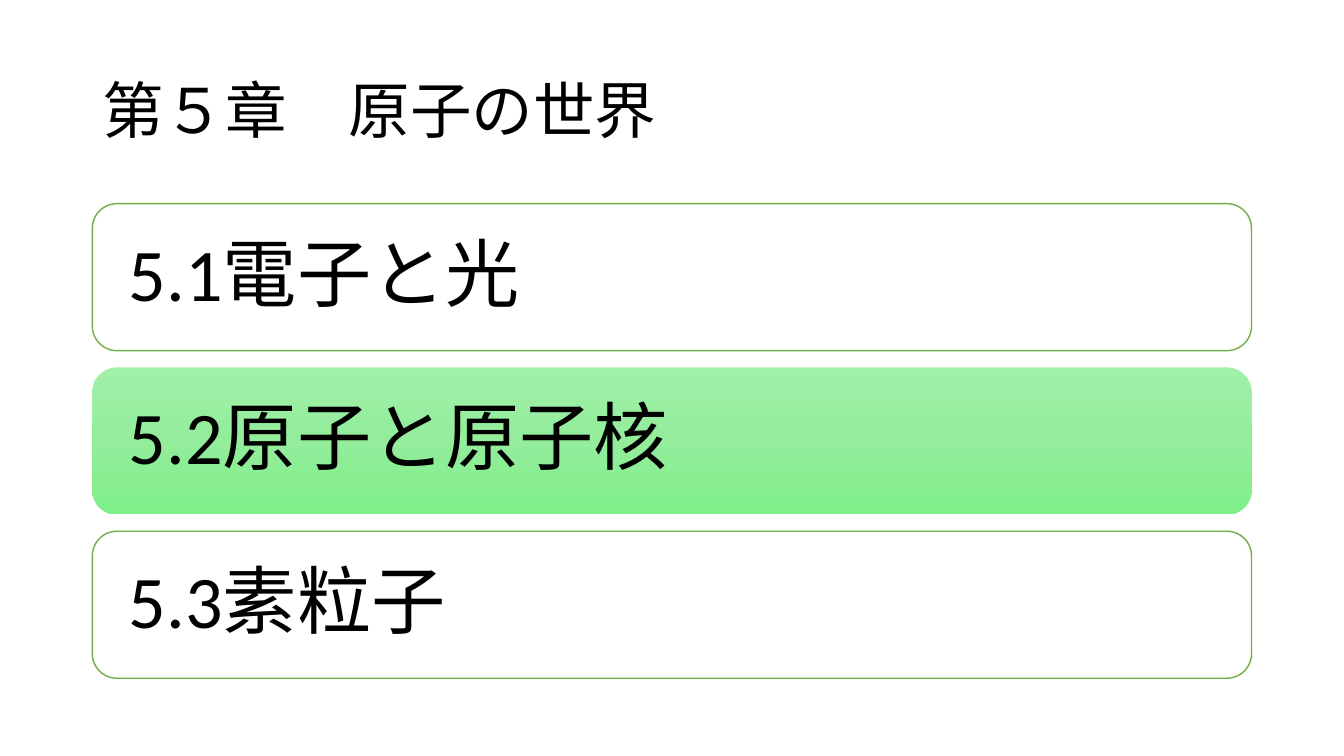
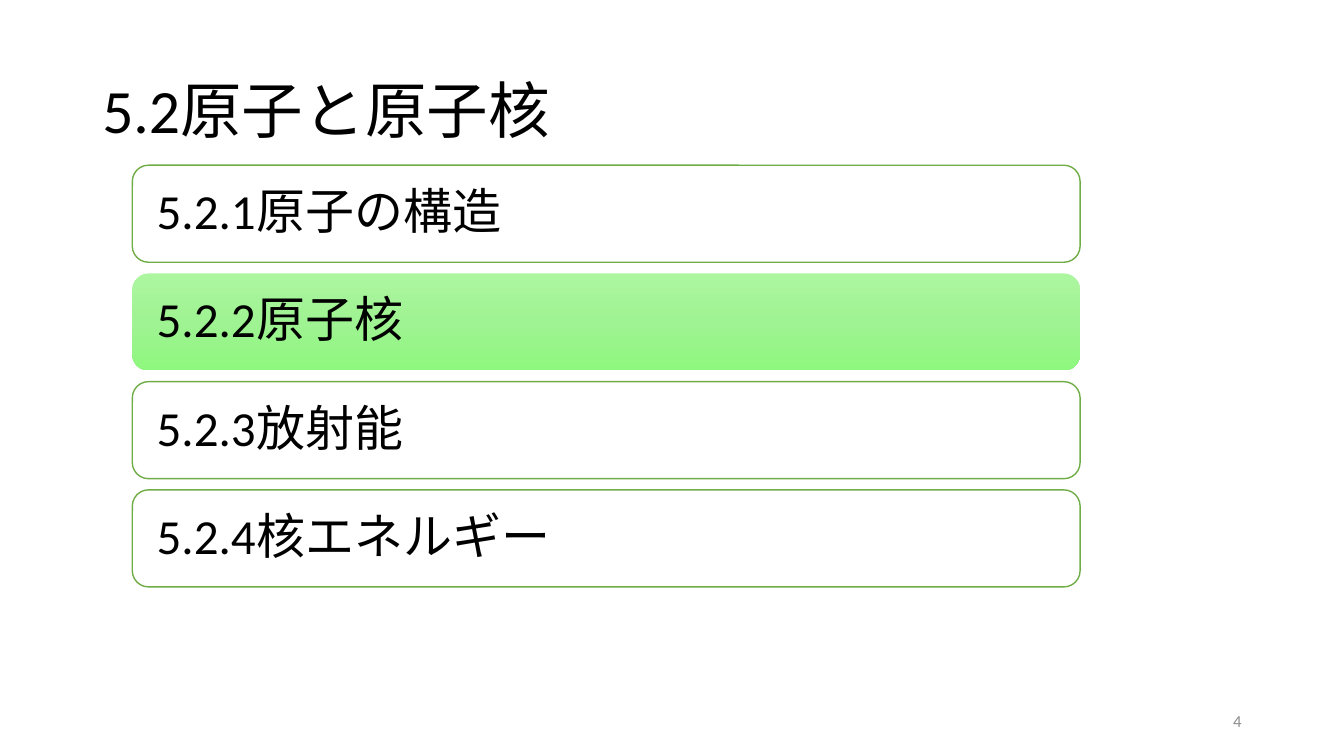
from copy import deepcopy
from dataclasses import dataclass

from pptx import Presentation
from pptx.dml.color import RGBColor
from pptx.enum.shapes import MSO_SHAPE
from pptx.enum.text import MSO_ANCHOR, PP_ALIGN
from pptx.oxml.ns import qn
from pptx.shapes.autoshape import Shape
from pptx.slide import Slide
from pptx.text.text import TextFrame
from pptx.util import Pt

FONT = "Calibri"
BLACK = RGBColor(0x00, 0x00, 0x00)
WHITE = RGBColor(0xFF, 0xFF, 0xFF)
GREEN = RGBColor(0x70, 0xAD, 0x47)
GRAY = RGBColor(0x8C, 0x8C, 0x8C)
CHAPTER_GREENS = (RGBColor(0xA1, 0xF0, 0xA9), RGBColor(0x93, 0xED, 0x9B),
                  RGBColor(0x7F, 0xEF, 0x89))
SECTION_GREENS = (RGBColor(0xAC, 0xF6, 0xA0), RGBColor(0x9F, 0xF3, 0x92),
                  RGBColor(0x8E, 0xF7, 0x7D))


@dataclass(frozen=True)
class Agenda:
    """A column of rounded cards, one of them highlighted."""
    items: tuple[str, ...]
    current: int
    greens: tuple[RGBColor, ...]
    left: float
    top: float
    width: float
    height: float
    pitch: float
    inset: float
    size: float


@dataclass(frozen=True)
class Page:
    title: str
    agenda: Agenda
    number: str = ""


PAGES = (
    Page("第５章　原子の世界",
         Agenda(("5.1電子と光", "5.2原子と原子核", "5.3素粒子"), 1, CHAPTER_GREENS,
                left=66, top=145.5, width=828, height=105, pitch=117,
                inset=21, size=53)),
    Page("5.2原子と原子核",
         Agenda(("5.2.1原子の構造", "5.2.2原子核", "5.2.3放射能", "5.2.4核エネルギー"),
                1, SECTION_GREENS,
                left=94.5, top=118, width=677, height=69.3, pitch=77.3,
                inset=14, size=35),
         number="4"),
)


def write(tf: TextFrame, text: str, size: float, color: RGBColor = BLACK,
          align: PP_ALIGN = PP_ALIGN.LEFT, spacing: float = 0.9) -> None:
    tf.word_wrap = True
    tf.vertical_anchor = MSO_ANCHOR.MIDDLE
    p = tf.paragraphs[0]
    p.text = text
    p.alignment = align
    p.line_spacing = spacing
    p.font.name = FONT
    p.font.size = Pt(size)
    p.font.color.rgb = color


def add_label(s: Slide, left: float, top: float, width: float,
              height: float) -> TextFrame:
    return s.shapes.add_textbox(Pt(left), Pt(top), Pt(width), Pt(height)).text_frame


def fill_gradient(sp: Shape, colors: tuple[RGBColor, ...]) -> None:
    """Fill from top to bottom with three evenly spaced stops."""
    sp.fill.gradient()
    sp.fill.gradient_angle = 270
    first = sp._element.spPr.find(".//" + qn("a:gs"))
    first.addnext(deepcopy(first))
    for stop, position, color in zip(sp.fill.gradient_stops, (0, 0.5, 1), colors):
        stop.position = position
        stop.color.rgb = color


def add_agenda(s: Slide, agenda: Agenda) -> None:
    for i, item in enumerate(agenda.items):
        sp = s.shapes.add_shape(
            MSO_SHAPE.ROUNDED_RECTANGLE, Pt(agenda.left),
            Pt(agenda.top + i * agenda.pitch), Pt(agenda.width), Pt(agenda.height))
        sp.shadow.inherit = False
        if i == agenda.current:
            fill_gradient(sp, agenda.greens)
            sp.line.fill.background()
        else:
            sp.fill.solid()
            sp.fill.fore_color.rgb = WHITE
            sp.line.color.rgb = GREEN
            sp.line.width = Pt(1)
        tf = sp.text_frame
        tf.margin_left = tf.margin_right = Pt(agenda.inset)
        tf.margin_top = tf.margin_bottom = Pt(0)
        write(tf, item, agenda.size)


def add_page(prs: Presentation, page: Page) -> None:
    s = prs.slides.add_slide(prs.slide_layouts[6])
    # Title
    write(add_label(s, 66, 28.8, 828, 104.4), page.title, 44)
    # Cards
    add_agenda(s, page.agenda)
    # Page number
    if page.number:
        write(add_label(s, 678, 500.4, 216, 28.8), page.number, 12, GRAY,
              PP_ALIGN.RIGHT, 1.0)


def main() -> None:
    prs = Presentation()
    prs.slide_width, prs.slide_height = Pt(960), Pt(540)
    for page in PAGES:
        add_page(prs, page)
    prs.save("out.pptx")


if __name__ == "__main__":
    main()
